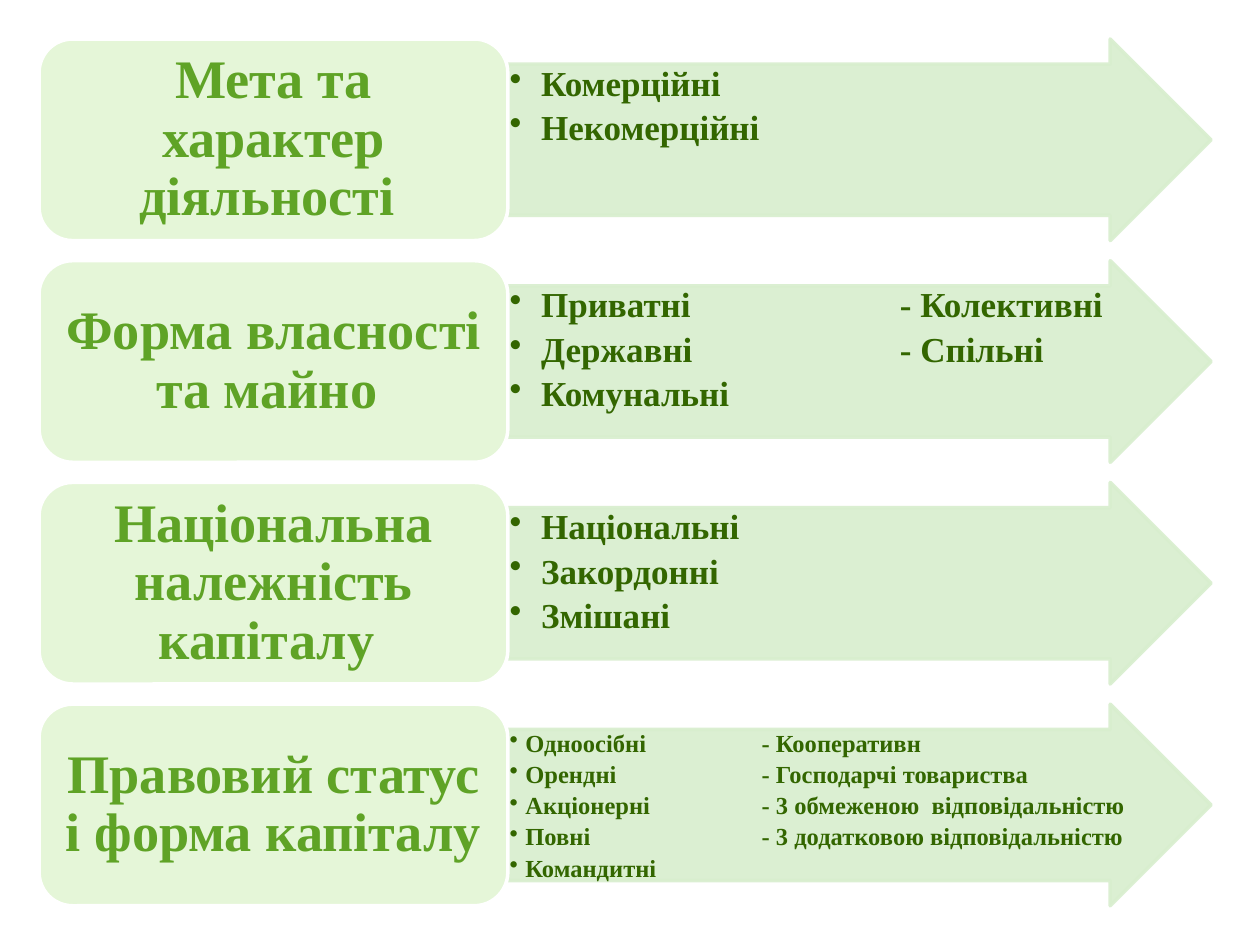
from lxml import etree
from pptx import Presentation
from pptx.dml.color import RGBColor
from pptx.enum.shapes import MSO_SHAPE
from pptx.enum.text import MSO_ANCHOR, PP_ALIGN
from pptx.oxml.ns import qn
from pptx.util import Pt

ARROW, BOX = MSO_SHAPE.RIGHT_ARROW, MSO_SHAPE.ROUNDED_RECTANGLE
TOP, MIDDLE = MSO_ANCHOR.TOP, MSO_ANCHOR.MIDDLE
LEFT, CENTER = PP_ALIGN.LEFT, PP_ALIGN.CENTER
FONT = "Times New Roman"
PALE, MINT, WHITE = "E5F6D8", "D8EECE", "FFFFFF"
GREEN, DARK = "5FA326", "336600"
EDGE, SPLIT, START = 22.3, 290.2, 22.3
WIDE, HIGH, STEP = 401.8, 115.2, 126.7

ROWS = [
    ("Мета та характер діяльності ", 20, 18, 223,
     ["Комерційні", "Некомерційні"]),
    ("Форма власності та майно ", 20, 18, 223,
     ["Приватні\t- Колективні", "Державні\t- Спільні", "Комунальні"]),
    ("Національна належність капіталу ", 20, 18, 223,
     ["Національні", "Закордонні", "Змішані"]),
    ("Правовий статус і форма капіталу", 14, 9, 144,
     ["Одноосібні\t- Кооперативн",
      "Орендні\t- Господарчі товариства",
      "Акціонерні\t- 3 обмеженою  відповідальністю",
      "Повні\t- 3 додатковою відповідальністю",
      "Командитні"]),
]


def color(code):
    """Turn a hex string into a colour."""
    return RGBColor.from_string(code)


def add(parent, tag, **attrs):
    """Append a drawing element with attributes."""
    node = etree.SubElement(parent, qn(tag))
    for key, value in attrs.items():
        node.set(key, str(value))
    return node


def fade(shape):
    """Make the fill and line of a shape 90 percent opaque."""
    for node in shape.element.spPr.iter(qn("a:srgbClr")):
        add(node, "a:alpha", val=90000)


def block(slide, kind, left, top, width, fill, line):
    """Add a filled and outlined shape."""
    shape = slide.shapes.add_shape(
        kind, Pt(left), Pt(top), Pt(width), Pt(HIGH))
    shape.shadow.inherit = False
    shape.fill.solid()
    shape.fill.fore_color.rgb = color(fill)
    shape.line.color.rgb = color(line)
    shape.line.width = Pt(2)
    return shape


def frame(shape, anchor, side, edge):
    """Prepare the text frame of a shape."""
    text = shape.text_frame
    text.word_wrap = True
    text.vertical_anchor = anchor
    text.margin_left = text.margin_right = Pt(side)
    text.margin_top = text.margin_bottom = Pt(edge)
    return text


def write(para, words, size, code, align):
    """Write one bold run into a paragraph."""
    para.alignment = align
    para.line_spacing = 0.9
    run = para.add_run()
    run.text = words
    font = run.font
    font.name, font.size, font.bold = FONT, Pt(size), True
    font.color.rgb = color(code)


def bullet(para, indent, stop):
    """Give a paragraph a hanging bullet and a tab stop."""
    para.level = 1
    props = para._p.get_or_add_pPr()
    props.set("marL", str(Pt(indent)))
    props.set("indent", str(-Pt(indent)))
    add(props, "a:buChar", char="•")
    tabs = add(props, "a:tabLst")
    add(tabs, "a:tab", pos=Pt(stop), algn="l")


def arrow(slide, top, items, size, indent, stop):
    """Add an arrow that holds a bulleted list."""
    shape = block(slide, ARROW, SPLIT, top, WIDE, MINT, MINT)
    shape.adjustments[0], shape.adjustments[1] = 0.75, 0.5
    fade(shape)
    text = frame(shape, TOP, 1, 1)
    for spot, item in enumerate(items):
        para = text.add_paragraph() if spot else text.paragraphs[0]
        write(para, item, size, DARK, LEFT)
        para.space_after = Pt(round(size * 0.19, 1))
        bullet(para, indent, stop)


def label(slide, top, words):
    """Add a rounded box with a heading."""
    shape = block(slide, BOX, EDGE, top, SPLIT - EDGE, PALE, WHITE)
    text = frame(shape, MIDDLE, 9.3, 4.6)
    write(text.paragraphs[0], words, 31, GREEN, CENTER)


def main():
    """Build and save the slide."""
    deck = Presentation()
    deck.slide_width, deck.slide_height = Pt(720), Pt(540)
    slide = deck.slides.add_slide(deck.slide_layouts[6])
    for row, (title, size, indent, stop, items) in enumerate(ROWS):
        top = START + row * STEP
        arrow(slide, top, items, size, indent, stop)
        label(slide, top, title)
    deck.save("out.pptx")


if __name__ == "__main__":
    main()
